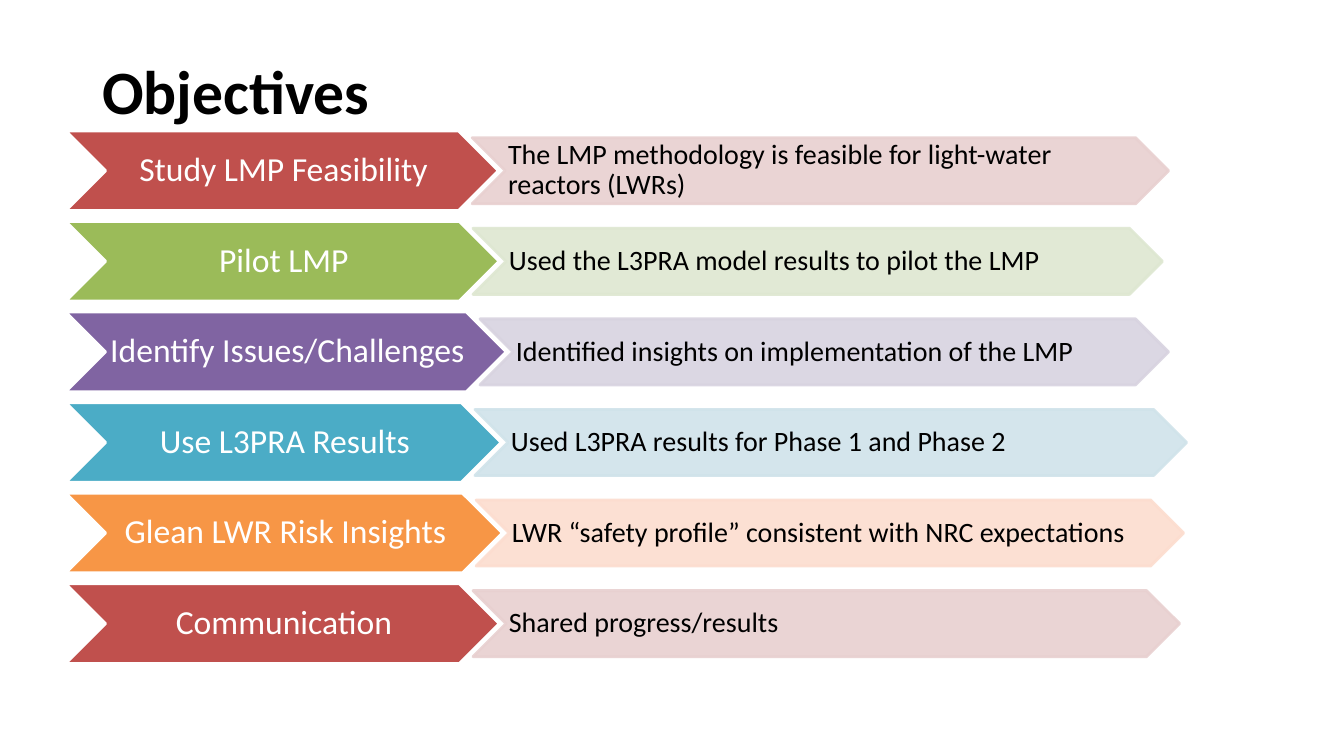
from lxml import etree
from pptx import Presentation
from pptx.dml.color import RGBColor
from pptx.enum.shapes import MSO_SHAPE
from pptx.enum.text import MSO_ANCHOR, PP_ALIGN
from pptx.oxml.ns import qn
from pptx.util import Pt

CHEVRON = MSO_SHAPE.CHEVRON
MIDDLE = MSO_ANCHOR.MIDDLE
LEFT, CENTER = PP_ALIGN.LEFT, PP_ALIGN.CENTER

FONT = "Calibri"
BLACK, WHITE = "000000", "FFFFFF"
RED, PALE_RED = "C0504D", "E8D0D0"

# Row grid, in points
ROW_LEFT, ROW_TOP, ROW_PITCH = 47, 93.5, 64.7
GOAL_HEIGHT, DETAIL_HEIGHT = 56.9, 47.2
OVERLAP = 18.7

# Goal, goal width, goal colour, detail, detail width, detail colour
OBJECTIVES = [
    ("Study LMP Feasibility", 309, RED,
     "The LMP methodology is feasible for light-water reactors (LWRs)", 497.5, PALE_RED),
    ("Pilot LMP", 309.6, "9BBB59",
     "Used the L3PRA model results to pilot the LMP", 492.5, "DEE7D1"),
    ("Identify Issues/Challenges", 314.6, "8064A2",
     "Identified insights on implementation of the LMP", 491.8, "D8D3E0"),
    ("Use L3PRA Results", 311, "4BACC6",
     "Used L3PRA results for Phase 1 and Phase 2", 508.3, "D0E3EA"),
    ("Glean LWR Risk Insights", 311.8, "F79646",
     "LWR “safety profile” consistent with NRC expectations", 505.4, "FCDDCF"),
    ("Communication", 309.6, RED,
     "Shared progress/results", 504.7, PALE_RED),
]


def rgb(hex_color):
    return RGBColor.from_string(hex_color)


def write(frame, text, size, color, align=LEFT, bold=False):
    frame.word_wrap = True
    frame.vertical_anchor = MIDDLE
    frame.text = text
    paragraph = frame.paragraphs[0]
    paragraph.alignment = align
    font = paragraph.runs[0].font
    font.name, font.size, font.bold = FONT, Pt(size), bold
    font.color.rgb = rgb(color)


def add_title(slide, text):
    title = slide.shapes.add_textbox(Pt(66), Pt(36), Pt(828), Pt(57))
    write(title.text_frame, text, 44, BLACK, bold=True)


def add_chevron(slide, box, fill, line, text, size, color, align, margin):
    chevron = slide.shapes.add_shape(CHEVRON, *(Pt(length) for length in box))
    chevron.shadow.inherit = False
    chevron.fill.solid()
    chevron.fill.fore_color.rgb = rgb(fill)
    chevron.line.color.rgb = rgb(line)
    chevron.line.width = Pt(2)
    frame = chevron.text_frame
    frame.margin_left, frame.margin_right = Pt(2), Pt(0)
    frame.margin_top = frame.margin_bottom = Pt(margin)
    write(frame, text, size, color, align)
    frame.paragraphs[0].line_spacing = 0.9
    return chevron


def make_translucent(shape, percent):
    for color in shape.element.spPr.iter(qn("a:srgbClr")):
        etree.SubElement(color, qn("a:alpha"), val=str(percent * 1000))


def add_objective(slide, top, goal, goal_width, goal_color,
                  detail, detail_width, detail_color):
    # Goal on the left
    add_chevron(slide, (ROW_LEFT, top, goal_width, GOAL_HEIGHT),
                goal_color, WHITE, goal, 24, WHITE, CENTER, 1.2)
    # Pale detail, nested into the tip of the goal
    detail_left = ROW_LEFT + goal_width - OVERLAP
    detail_top = top + (GOAL_HEIGHT - DETAIL_HEIGHT) / 2
    band = add_chevron(slide, (detail_left, detail_top, detail_width, DETAIL_HEIGHT),
                       detail_color, detail_color, detail, 20, BLACK, LEFT, 1)
    make_translucent(band, 90)


def main():
    prs = Presentation()
    prs.slide_width, prs.slide_height = Pt(960), Pt(540)
    slide = prs.slides.add_slide(prs.slide_layouts[6])
    add_title(slide, "Objectives")
    for row, objective in enumerate(OBJECTIVES):
        add_objective(slide, ROW_TOP + row * ROW_PITCH, *objective)
    prs.save("out.pptx")


if __name__ == "__main__":
    main()
